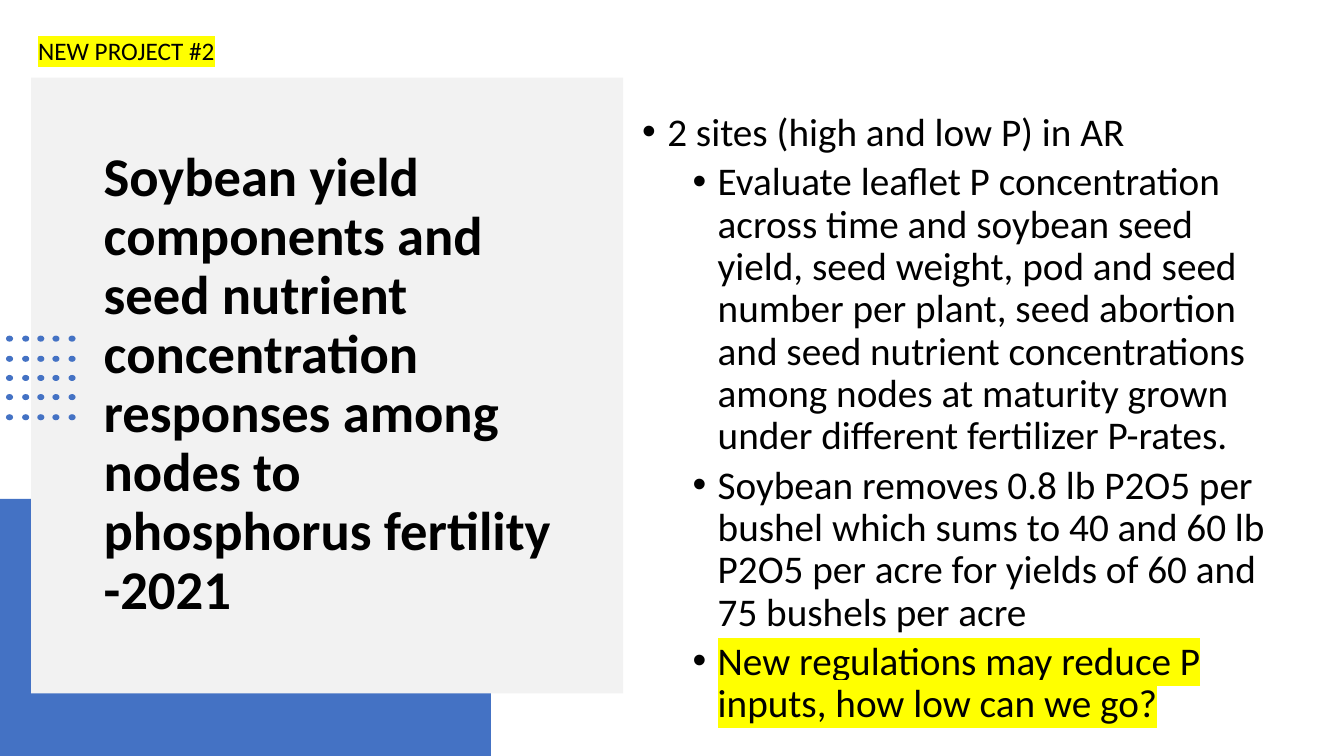
import pptx
import pptx.dml.color
import pptx.enum.shapes
import pptx.enum.text
import pptx.oxml.ns
import pptx.util
from lxml import etree

PX = 9144
BLUE, GRAY, BLACK, YELLOW = "4472C4", "F2F2F2", "000000", "FFFF00"
MIDDLE = pptx.enum.text.MSO_ANCHOR.MIDDLE
RECT = pptx.enum.shapes.MSO_SHAPE.RECTANGLE
OVAL = pptx.enum.shapes.MSO_SHAPE.OVAL

TITLE = ("Soybean yield components and seed nutrient concentration "
         "responses among nodes to phosphorus fertility\v-2021")
BULLETS = [
    (0, "2 sites (high and low P) in AR", None),
    (1, "Evaluate leaflet P concentration across time and soybean seed yield, "
        "seed weight, pod and seed number per plant, seed abortion and seed "
        "nutrient concentrations among nodes at maturity grown under different "
        "fertilizer P-rates.", None),
    (1, "Soybean removes 0.8 lb P2O5 per bushel which sums to 40 and 60 lb P2O5 "
        "per acre for yields of 60 and 75 bushels per acre", None),
    (1, "New regulations may reduce P inputs, how low can we go?", YELLOW),
]


def px(n):
    return pptx.util.Emu(n * PX)


def rgb(value):
    return pptx.dml.color.RGBColor.from_string(value)


def apply(target, formats):
    for name, value in formats.items():
        setattr(target, name, value)


def sub(parent, tag, **attrs):
    return etree.SubElement(parent, pptx.oxml.ns.qn(tag), attrs)


def add_block(shapes, kind, box, color):
    sp = shapes.add_shape(kind, *map(px, box))
    sp.shadow.inherit = False
    sp.fill.solid()
    sp.fill.fore_color.rgb = rgb(color)
    sp.line.fill.background()


def add_frame(s, box, **formats):
    tf = s.shapes.add_textbox(*map(px, box)).text_frame
    apply(tf, {"word_wrap": True, **formats})
    return tf


def write(p, text, size, bold=False, highlight=None):
    p.text = text
    for r in p.runs:
        apply(r.font, {"name": "Calibri", "size": pptx.util.Pt(size), "bold": bold})
        r.font.color.rgb = rgb(BLACK)
        if highlight:
            rPr = r._r.get_or_add_rPr()
            mark = sub(rPr, "a:highlight")
            sub(mark, "a:srgbClr", val=highlight)
            rPr.find(pptx.oxml.ns.qn("a:solidFill")).addnext(mark)


def add_dots(s, box, count=5, width=7, height=6):
    left, top, w, h = box
    dots = s.shapes.add_group_shape().shapes
    for col in range(count):
        for row in range(count):
            x = left + round(col * (w - width) / (count - 1))
            y = top + round(row * (h - height) / (count - 1))
            add_block(dots, OVAL, (x, y, width, height), BLUE)


def add_title_panel(s, box):
    left, top, w, h = box
    add_block(s.shapes, RECT, (0, 495, 487, 255), BLUE)
    add_block(s.shapes, RECT, box, GRAY)
    tf = add_frame(s, (left + 62, top + 35, w - 110, h - 70), vertical_anchor=MIDDLE)
    p = tf.paragraphs[0]
    p.line_spacing = 0.9
    write(p, TITLE, 39, bold=True)
    add_dots(s, (left - 25, top + 256, 69, 84))


def add_bullets(s, box):
    tf = add_frame(s, box, vertical_anchor=MIDDLE, margin_top=px(19))
    for i, (level, text, highlight) in enumerate(BULLETS):
        p = tf.add_paragraph() if i else tf.paragraphs[0]
        pPr = p._p.get_or_add_pPr()
        pPr.set("marL", str(px(25 + 50 * level)))
        pPr.set("indent", str(px(-25)))
        sub(pPr, "a:buFont", typeface="Arial")
        sub(pPr, "a:buChar", char="•")
        apply(p, {"level": level, "line_spacing": 0.9,
                  "space_before": pptx.util.Pt(5 if i else 0)})
        write(p, text, 28, highlight=highlight)


def add_tag(s, box):
    write(add_frame(s, box).paragraphs[0], "NEW PROJECT #2", 18, highlight=YELLOW)


def main():
    prs = pptx.Presentation()
    apply(prs, {"slide_width": px(1333), "slide_height": px(750)})
    s = prs.slides.add_slide(prs.slide_layouts[6])
    add_title_panel(s, (31, 77, 587, 611))
    add_bullets(s, (627, 82, 642, 654))
    add_tag(s, (28, 30, 360, 40))
    prs.save("out.pptx")


if __name__ == "__main__":
    main()
